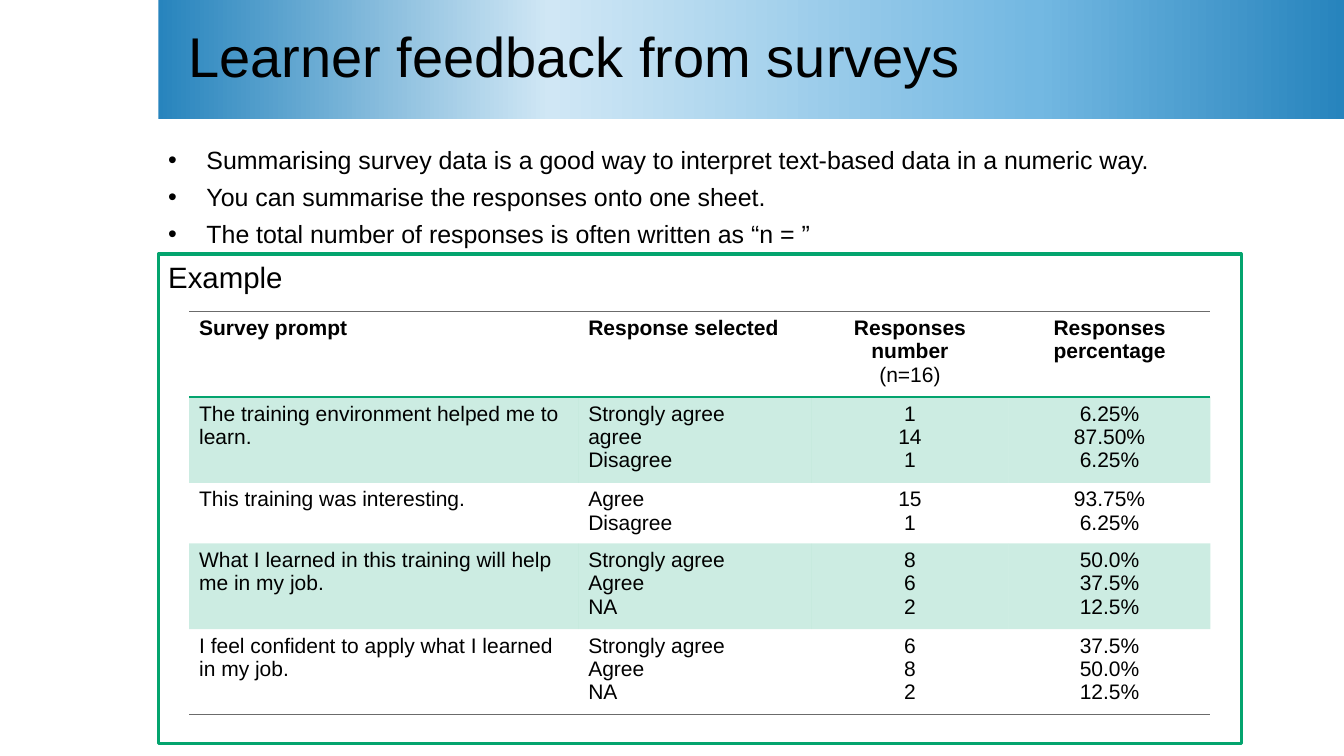
import pptx
import pptx.dml.color
import pptx.enum.shapes
import pptx.enum.text
import pptx.oxml.ns
import pptx.util
from lxml import etree

FONT = "Arial"
GREEN, BLACK, GREY = "03A46E", "000000", "6B6B6B"
TITLE_STOPS = [(0, "2784BD"), (33, "D0E7F5"), (74, "73B8E2"), (100, "2784BD")]
NO_STYLE = "{2D5ABB26-0587-4C30-8999-92F81FD0307C}"
LEFT = 1.57

BULLETS = [
    "Summarising survey data is a good way to interpret text-based data in a numeric way.",
    "You can summarise the responses onto one sheet.",
    "The total number of responses is often written as “n = ”",
]
COLUMNS = [3.86, 2.31, 1.96, 2.0]
HEADER = [["Survey prompt"], ["Response selected"],
          ["Responses", "number", "(n=16)"], ["Responses", "percentage"]]
SURVEY = [
    [["The training environment helped me to learn."],
     ["Strongly agree", "agree", "Disagree"],
     ["1", "14", "1"], ["6.25%", "87.50%", "6.25%"]],
    [["This training was interesting."],
     ["Agree", "Disagree"], ["15", "1"], ["93.75%", "6.25%"]],
    [["What I learned in this training will help me in my job."],
     ["Strongly agree", "Agree", "NA"],
     ["8", "6", "2"], ["50.0%", "37.5%", "12.5%"]],
    [["I feel confident to apply what I learned in my job."],
     ["Strongly agree", "Agree", "NA"],
     ["6", "8", "2"], ["37.5%", "50.0%", "12.5%"]],
]


def rgb(value):
    return pptx.dml.color.RGBColor.from_string(value)


def inches(*lengths):
    return [pptx.util.Inches(n) for n in lengths]


def add(parent, tag, **attributes):
    """Append a DrawingML child element."""
    child = etree.SubElement(parent, pptx.oxml.ns.qn("a:" + tag))
    for name, value in attributes.items():
        child.set(name, str(value))
    return child


def add_run(p, text, size, bold=False):
    r = p.add_run()
    r.text = text
    r.font.name = FONT
    r.font.size = pptx.util.Pt(size)
    r.font.bold = bold
    r.font.color.rgb = rgb(BLACK)


def paragraphs(tf, count):
    """Yield the first paragraph of a frame, then new ones."""
    for i in range(count):
        yield tf.add_paragraph() if i else tf.paragraphs[0]


def indent(p, left, first=0.0):
    pPr = p._p.get_or_add_pPr()
    pPr.set("marL", str(pptx.util.Inches(left)))
    pPr.set("indent", str(pptx.util.Inches(first)))
    return pPr


def add_box(s, box):
    sp = s.shapes.add_shape(pptx.enum.shapes.MSO_SHAPE.RECTANGLE, *inches(*box))
    sp.shadow.inherit = False
    sp.text_frame.word_wrap = True
    p = sp.text_frame.paragraphs[0]
    p.alignment = pptx.enum.text.PP_ALIGN.LEFT
    return sp, p


def add_title(s, box, text):
    sp, p = add_box(s, box)
    sp.line.fill.background()
    sp.fill.gradient()
    sp.fill.gradient_angle = 0
    stops = sp._element.spPr.find(".//" + pptx.oxml.ns.qn("a:gsLst"))
    for stop in list(stops):
        stops.remove(stop)
    for position, color in TITLE_STOPS:
        add(add(stops, "gs", pos=position * 1000), "srgbClr", val=color)
    sp.text_frame.vertical_anchor = pptx.enum.text.MSO_ANCHOR.MIDDLE
    indent(p, 0.2)
    p.line_spacing = 0.9
    add_run(p, text, 40)


def add_bullets(s, box, lines):
    tf = s.shapes.add_textbox(*inches(*box)).text_frame
    tf.word_wrap = True
    for p, line in zip(paragraphs(tf, len(lines)), lines):
        pPr = indent(p, 0.38, -0.38)
        add(pPr, "buFont", typeface=FONT)
        add(pPr, "buChar", char="•")
        p.line_spacing = 0.9
        p.space_after = pptx.util.Pt(7)
        add_run(p, line, 17.8)


def add_border(cell, side, color, width):
    ln = add(cell._tc.get_or_add_tcPr(), "ln" + side, w=pptx.util.Pt(width))
    add(add(ln, "solidFill"), "srgbClr", val=color)


def fill_cell(cell, lines, centred, header, banded):
    for p, line in zip(paragraphs(cell.text_frame, len(lines)), lines):
        if centred:
            p.alignment = pptx.enum.text.PP_ALIGN.CENTER
        add_run(p, line, 15, header and not line.startswith("("))
    if banded:
        cell.fill.solid()
        cell.fill.fore_color.rgb = rgb(GREEN)
        color = cell._tc.tcPr.find("./{*}solidFill/{*}srgbClr")
        add(color, "alpha", val=20000)
    else:
        cell.fill.background()


def add_survey_table(s, left, top):
    rows = [HEADER] + SURVEY
    heights = [0.1 + 0.233 * max(map(len, row)) for row in rows]
    box = inches(left, top, sum(COLUMNS), sum(heights))
    table = s.shapes.add_table(len(rows), len(COLUMNS), *box).table
    table.first_row = table.horz_banding = False
    table._tbl.tblPr.find(pptx.oxml.ns.qn("a:tableStyleId")).text = NO_STYLE
    for column, width in zip(table.columns, inches(*COLUMNS)):
        column.width = width
    for i, row in enumerate(rows):
        table.rows[i].height = pptx.util.Inches(heights[i])
        for j, lines in enumerate(row):
            cell = table.cell(i, j)
            if i == 0:
                add_border(cell, "T", GREY, 0.75)
                add_border(cell, "B", GREEN, 1.5)
            elif i == len(rows) - 1:
                add_border(cell, "B", GREY, 0.75)
            fill_cell(cell, lines, j >= 2, i == 0, i % 2 == 1)


def add_example(s, box):
    """Green frame with its label and the survey table inside."""
    sp, p = add_box(s, box)
    sp.fill.background()
    sp.line.color.rgb = rgb(GREEN)
    sp.line.width = pptx.util.Pt(2.25)
    sp.text_frame.vertical_anchor = pptx.enum.text.MSO_ANCHOR.TOP
    add_run(p, "Example", 21)
    left, top, width, _ = box
    add_survey_table(s, left + (width - sum(COLUMNS)) / 2, top + 0.57)


def main():
    prs = pptx.Presentation()
    prs.slide_width, prs.slide_height = inches(13.33, 7.5)
    s = prs.slides.add_slide(prs.slide_layouts[6])
    add_title(s, (LEFT, 0, 13.33 - LEFT, 1.18), "Learner feedback from surveys")
    add_bullets(s, (LEFT, 1.42, 10.64, 1.34), BULLETS)
    add_example(s, (LEFT, 2.52, 10.74, 4.86))
    prs.save("out.pptx")


if __name__ == "__main__":
    main()
